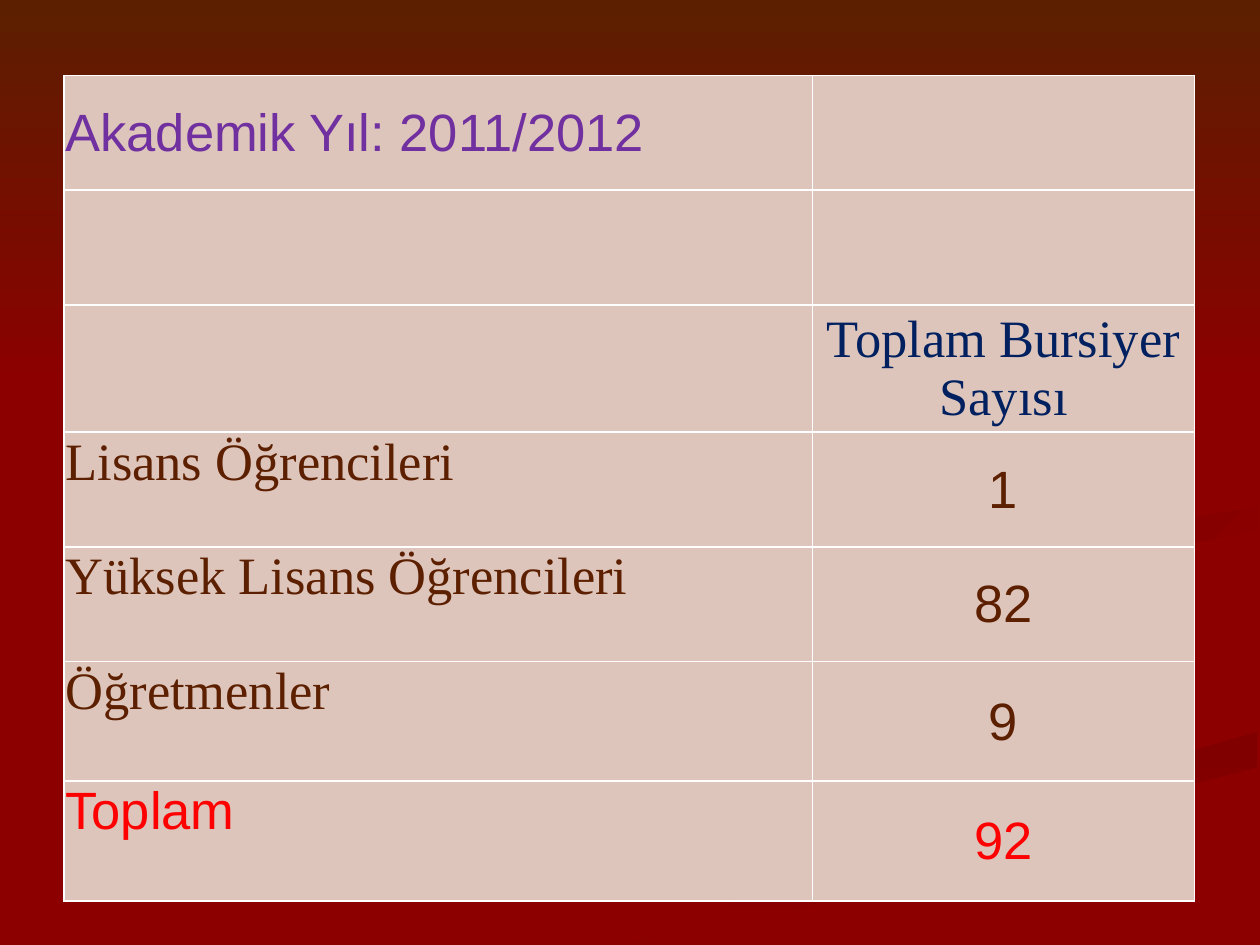
from lxml import etree
from pptx import Presentation
from pptx.dml.color import RGBColor
from pptx.enum.shapes import MSO_SHAPE
from pptx.enum.text import MSO_ANCHOR, PP_ALIGN
from pptx.oxml.ns import qn
from pptx.util import Inches, Pt

DARK_RED = RGBColor(0x8C, 0x00, 0x00)
SHADE = RGBColor(0x80, 0x00, 0x00)
BROWN = RGBColor(0x5C, 0x1F, 0x00)
PINK = RGBColor(0xDE, 0xC5, 0xBB)
PURPLE = RGBColor(0x70, 0x30, 0xA0)
NAVY = RGBColor(0x00, 0x20, 0x60)
RED = RGBColor(0xFF, 0x00, 0x00)
SANS, SERIF = "Arial", "Times New Roman"

# Outlines in inches of the ribbons that sweep behind the table
LOWER_RIBBON = [(5.03, 7.49), (5.71, 7.49), (7.52, 6.72), (9.98, 6.09),
                (9.98, 5.81), (7.64, 6.47)]
MIDDLE_RIBBON = [(7.81, 4.6), (8.26, 4.96), (8.16, 4.59), (9.98, 4.2),
                 (9.98, 4.02), (8.21, 4.34)]
UPPER_RIBBON = [(7.62, 2.33), (8.88, 3.41), (5.77, 4.62), (6.22, 5),
                (6.14, 4.48), (8.94, 3.44)]

COLUMN_WIDTHS = [5.94, 3.03]
ROW_HEIGHTS = [0.91] * 2 + [1.01] + [0.91] * 2 + [0.95] * 2
# Each row: label, label font, value, value font, colour
ROWS = [
    ("Akademik Yıl: 2011/2012", SANS, "", SANS, PURPLE),
    ("", SANS, "", SANS, BROWN),
    ("", SANS, "Toplam Bursiyer Sayısı", SERIF, NAVY),
    ("Lisans Öğrencileri", SERIF, "1", SANS, BROWN),
    ("Yüksek Lisans Öğrencileri", SERIF, "82", SANS, BROWN),
    ("Öğretmenler", SERIF, "9", SANS, BROWN),
    ("Toplam", SANS, "92", SANS, RED),
]


def shade(shape, first_colour, last_colour, angle):
    shape.shadow.inherit = False
    shape.line.fill.background()
    shape.fill.gradient()
    shape.fill.gradient_angle = angle
    for stop, colour in zip(shape.fill.gradient_stops, (first_colour, last_colour)):
        stop.color.rgb = colour


def add_ribbon(slide, outline, angle):
    start, *rest = [(Inches(x), Inches(y)) for x, y in outline]
    builder = slide.shapes.build_freeform(*start)
    builder.add_line_segments(rest, close=True)
    shade(builder.convert_to_shape(), SHADE, DARK_RED, angle)


def add_backdrop(slide, width, band_height):
    slide.background.fill.solid()
    slide.background.fill.fore_color.rgb = DARK_RED
    add_ribbon(slide, LOWER_RIBBON, 270)
    add_ribbon(slide, MIDDLE_RIBBON, 315)
    add_ribbon(slide, UPPER_RIBBON, 315)
    band = slide.shapes.add_shape(MSO_SHAPE.RECTANGLE, 0, 0, width, band_height)
    shade(band, BROWN, DARK_RED, 270)


def add_white_borders(cell):
    properties = cell._tc.get_or_add_tcPr()
    for position, side in enumerate(("lnL", "lnR", "lnT", "lnB")):
        border = etree.Element(qn(f"a:{side}"), w=str(Pt(1)))
        fill = etree.SubElement(border, qn("a:solidFill"))
        etree.SubElement(fill, qn("a:srgbClr"), val="FFFFFF")
        properties.insert(position, border)


def write_entry(cell, text, font_name, colour, alignment, anchor):
    cell.margin_left = cell.margin_right = cell.margin_top = Inches(0.01)
    cell.margin_bottom = 0
    cell.vertical_anchor = anchor
    cell.text = text
    paragraph = cell.text_frame.paragraphs[0]
    paragraph.alignment = alignment
    paragraph.font.name = font_name
    paragraph.font.size = Pt(30)
    paragraph.font.color.rgb = colour


def add_scholar_table(slide, left, top, width, height):
    table = slide.shapes.add_table(
        len(ROWS), len(COLUMN_WIDTHS), left, top, width, height).table
    table.first_row = table.horz_banding = False
    for column, column_width in zip(table.columns, COLUMN_WIDTHS):
        column.width = Inches(column_width)
    for row, row_height in zip(table.rows, ROW_HEIGHTS):
        row.height = Inches(row_height)
    for cell in table.iter_cells():
        cell.fill.solid()
        cell.fill.fore_color.rgb = PINK
        add_white_borders(cell)
    for index, (label, label_font, value, value_font, colour) in enumerate(ROWS):
        if label:
            anchor = MSO_ANCHOR.TOP if index else MSO_ANCHOR.MIDDLE
            write_entry(table.cell(index, 0), label, label_font, colour,
                        PP_ALIGN.LEFT, anchor)
        if value:
            write_entry(table.cell(index, 1), value, value_font, colour,
                        PP_ALIGN.CENTER, MSO_ANCHOR.MIDDLE)


def main():
    presentation = Presentation()
    presentation.slide_width, presentation.slide_height = Inches(10), Inches(7.5)
    slide = presentation.slides.add_slide(presentation.slide_layouts[6])
    add_backdrop(slide, presentation.slide_width, Inches(3.08))
    add_scholar_table(slide, Inches(0.51), Inches(0.6), Inches(8.98), Inches(6.56))
    presentation.save("out.pptx")


if __name__ == "__main__":
    main()
